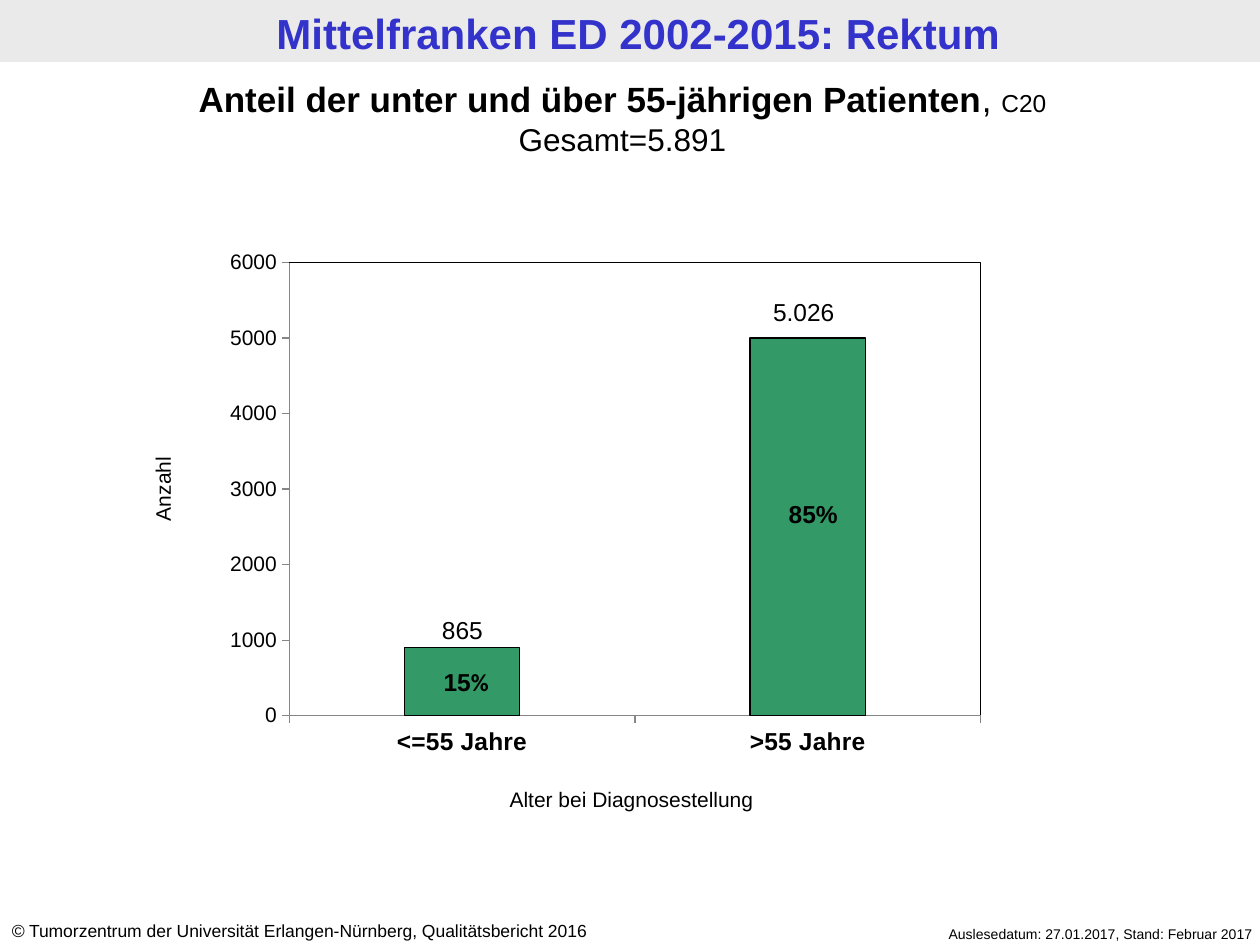
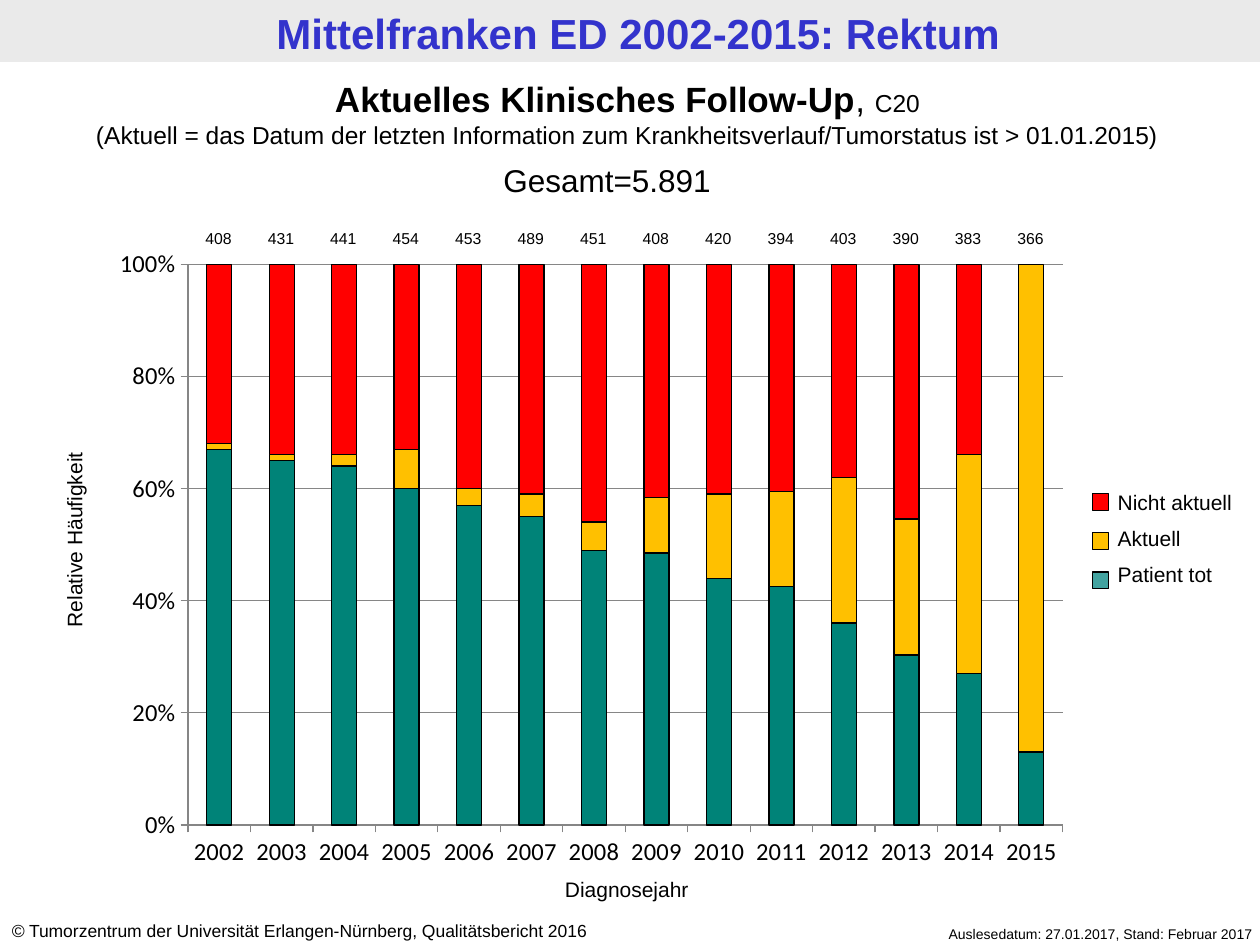
"""Build two cancer registry slides with column charts."""
import pptx
import pptx.chart.data
import pptx.dml.color
import pptx.enum.chart
import pptx.enum.shapes
import pptx.enum.text
import pptx.oxml
import pptx.oxml.ns
import pptx.util

Pt = pptx.util.Pt
qn = pptx.oxml.ns.qn
Align = pptx.enum.text.PP_ALIGN
Kind = pptx.enum.chart.XL_CHART_TYPE
BLACK, GREY, RED, GOLD = "000000", "868686", "FF0000", "FFC000"
CODE = [(", ", {"bold": False}), ("C20", {"bold": False, "size": Pt(14)})]


def hue(code):
    return pptx.dml.color.RGBColor.from_string(code)


def ink(font, size, bold=False, color=BLACK, name="Arial"):
    font.size, font.bold, font.name = Pt(size), bold, name
    font.color.rgb = hue(color)


def edge(line, color=BLACK):
    line.color.rgb = hue(color)
    line.width = Pt(0.75)


class Deck:
    def __init__(self):
        self.prs = pptx.Presentation()
        self.prs.slide_width, self.prs.slide_height = Pt(720), Pt(540)

    def start(self):
        self.slide = self.prs.slides.add_slide(self.prs.slide_layouts[5])
        band = self.rect((0, 0, 720, 35.4), "EAEAEA")
        title = self.slide.shapes.title
        band.element.addnext(title.element)
        title.left, title.top, title.width, title.height = map(Pt, (4.7, 1.2, 720, 35.3))
        frame = title.text_frame
        frame.text = "Mittelfranken ED 2002-2015: Rektum"
        frame.auto_size = pptx.enum.text.MSO_AUTO_SIZE.NONE
        frame.vertical_anchor = pptx.enum.text.MSO_ANCHOR.MIDDLE
        frame.margin_top = frame.margin_bottom = Pt(3)
        para = frame.paragraphs[0]
        para.alignment = Align.CENTER
        ink(para.font, 24, True, "3333CC")
        owner = " Tumorzentrum der Universität Erlangen-Nürnberg, Qualitätsbericht 2016"
        self.text([[("©", {"italic": True}), (owner, {})]],
                  (-0.4, 522.3, 377, 19.4), 10, align=Align.LEFT)
        self.text(["Auslesedatum: 27.01.2017, Stand: Februar 2017"],
                  (479, 525.3, 244, 17), 8, align=Align.RIGHT)

    def rect(self, box, fill, line=None, alpha=None):
        shape = self.slide.shapes.add_shape(
            pptx.enum.shapes.MSO_SHAPE.RECTANGLE, *map(Pt, box))
        shape.shadow.inherit = False
        shape.fill.solid()
        shape.fill.fore_color.rgb = hue(fill)
        if alpha:
            tint = shape.element.spPr.find(qn("a:solidFill")).find(qn("a:srgbClr"))
            tint.append(pptx.oxml.parse_xml(
                f'<a:alpha {pptx.oxml.ns.nsdecls("a")} val="{alpha * 1000}"/>'))
        if line:
            edge(shape.line, line)
        else:
            shape.line.fill.background()
        return shape

    def text(self, lines, box, size, bold=False, align=Align.CENTER, turn=0, gap=0):
        shape = self.slide.shapes.add_textbox(*map(Pt, box))
        shape.rotation = turn
        frame = shape.text_frame
        frame.word_wrap = True
        for i, runs in enumerate(lines):
            para = frame.add_paragraph() if i else frame.paragraphs[0]
            para.alignment = align
            if i and gap:
                para.space_before = Pt(gap)
            ink(para.font, size, bold)
            for words, style in [(runs, {})] if isinstance(runs, str) else runs:
                run = para.add_run()
                run.text = words
                for key, value in style.items():
                    setattr(run.font, key, value)

    def head(self, words, below, size, box):
        plain = {"bold": False, "size": Pt(size)}
        self.text([[(words, {}), *CODE], [(below, plain)]], box, 20, True)

    def chart(self, kind, box, cats, rows, colors, gap, plot):
        data = pptx.chart.data.CategoryChartData()
        data.categories = cats
        for i, row in enumerate(rows, 1):
            data.add_series(f"Series {i}", row)
        chart = self.slide.shapes.add_chart(kind, *map(Pt, box), data).chart
        chart.has_title = chart.has_legend = False
        ink(chart.font, 18, name="Calibri")
        bars = chart.plots[0]
        bars.gap_width, bars.overlap, bars.vary_by_categories = gap, 100, False
        for series, color in zip(bars.series, colors):
            series.format.fill.solid()
            series.format.fill.fore_color.rgb = hue(color)
            edge(series.format.line)
        for axis in (chart.category_axis, chart.value_axis):
            axis.major_tick_mark = pptx.enum.chart.XL_TICK_MARK.OUTSIDE
            axis.has_major_gridlines = False
            edge(axis.format.line, GREY)
        area = self.area(chart)
        for old in area.findall(qn("c:layout")):
            area.remove(old)
        parts = "".join(f'<c:{key} val="{value}"/>' for key, value in zip("xywh", plot))
        area.insert(0, pptx.oxml.parse_xml(
            f'<c:layout {pptx.oxml.ns.nsdecls("c")}><c:manualLayout>'
            '<c:layoutTarget val="inner"/><c:xMode val="edge"/><c:yMode val="edge"/>'
            f'{parts}</c:manualLayout></c:layout>'))
        return chart

    def area(self, chart):
        return chart.element.find(qn("c:chart")).find(qn("c:plotArea"))

    def frame(self, chart):
        self.area(chart).append(pptx.oxml.parse_xml(
            f'<c:spPr {pptx.oxml.ns.nsdecls("c", "a")}><a:noFill/><a:ln w="9525">'
            f'<a:solidFill><a:srgbClr val="{BLACK}"/></a:solidFill></a:ln></c:spPr>'))


def ages(deck):
    deck.start()
    chart = deck.chart(Kind.COLUMN_STACKED, (108.5, 102.4, 502.6, 335.5),
                       ["<=55 Jahre", ">55 Jahre"], [[900, 5000]], ["339966"],
                       200, (0.113, 0.142, 0.786, 0.772))
    deck.frame(chart)
    ink(chart.category_axis.tick_labels.font, 14, True)
    count = chart.value_axis
    ink(count.tick_labels.font, 12)
    count.minimum_scale, count.maximum_scale, count.major_unit = 0, 6000, 1000
    deck.head("Anteil der unter und über 55-jährigen Patienten", "Gesamt=5.891",
              18, (0, 41, 711.4, 53.3))
    share = [("15", {}), ("%", {"name": "Calibri"})]
    for words, left, top, bold in ((share, 229.7, 377.7, True), ("85%", 428, 281.5, True),
                                   ("865", 227.5, 347.8, False), ("5.026", 422.6, 166.3, False)):
        deck.text([words], (left, top, 73.4, 24.5), 14, bold)
    deck.text(["Alter bei Diagnosestellung"], (241, 445.7, 239.8, 21.6), 12)
    deck.text(["Anzahl"], (-1, 268.6, 188, 21.6), 12, turn=270)


def follow(deck):
    deck.start()
    dead = [67, 65, 64, 60, 57, 55, 49, 49, 44, 43, 36, 30, 27, 13]
    fresh = [1, 1, 2, 7, 3, 4, 5, 10, 15, 17, 26, 24, 39, 87]
    stale = [32, 34, 34, 33, 40, 41, 46, 42, 41, 41, 38, 45, 34, 0]
    years = [str(year) for year in range(2002, 2016)]
    chart = deck.chart(Kind.COLUMN_STACKED_100, (56.9, 134.8, 561.6, 368), years,
                       [dead, fresh, stale], ["008378", GOLD, RED],
                       150, (0.09, 0.044, 0.89, 0.871))
    share = chart.value_axis
    for axis in (chart.category_axis, share):
        ink(axis.tick_labels.font, 14, name="Calibri")
    share.tick_labels.number_format = "0%"
    share.tick_labels.number_format_is_linked = False
    share.minimum_scale, share.maximum_scale, share.major_unit = 0, 1, 0.2
    share.has_major_gridlines = True
    edge(share.major_gridlines.format.line, GREY)
    deck.text(["Relative Häufigkeit"], (-44.1, 297.4, 173.5, 22.3), 12, turn=270)
    deck.text(["Diagnosejahr"], (277.2, 497.3, 162, 22.3), 12)
    deck.head("Aktuelles Klinisches Follow-Up",
              "(Aktuell = das Datum der letzten Information zum "
              "Krankheitsverlauf/Tumorstatus ist > 01.01.2015)",
              14, (-2.9, 41, 722.9, 48.2))
    deck.text(["Gesamt=5.891"], (280.6, 88.6, 158.4, 28.8), 18, align=Align.LEFT)
    deck.text(["Nicht aktuell", "Aktuell", "Patient tot"],
              (631.6, 276.3, 102.2, 65.5), 12, align=Align.LEFT, gap=6)
    for i, (color, alpha) in enumerate(((RED, None), (GOLD, None), ("008380", 74))):
        deck.rect((624.2, 282.2 + 22.3 * i, 9.4, 9.4), color, BLACK, alpha)
    totals = [408, 431, 441, 454, 453, 489, 451, 408, 420, 394, 403, 390, 383, 366]
    for i, total in enumerate(totals):
        deck.text([str(total)], (105 + 35.7 * i, 127.4, 39.6, 18), 9)


def main():
    deck = Deck()
    ages(deck)
    follow(deck)
    deck.prs.save("out.pptx")


if __name__ == "__main__":
    main()
